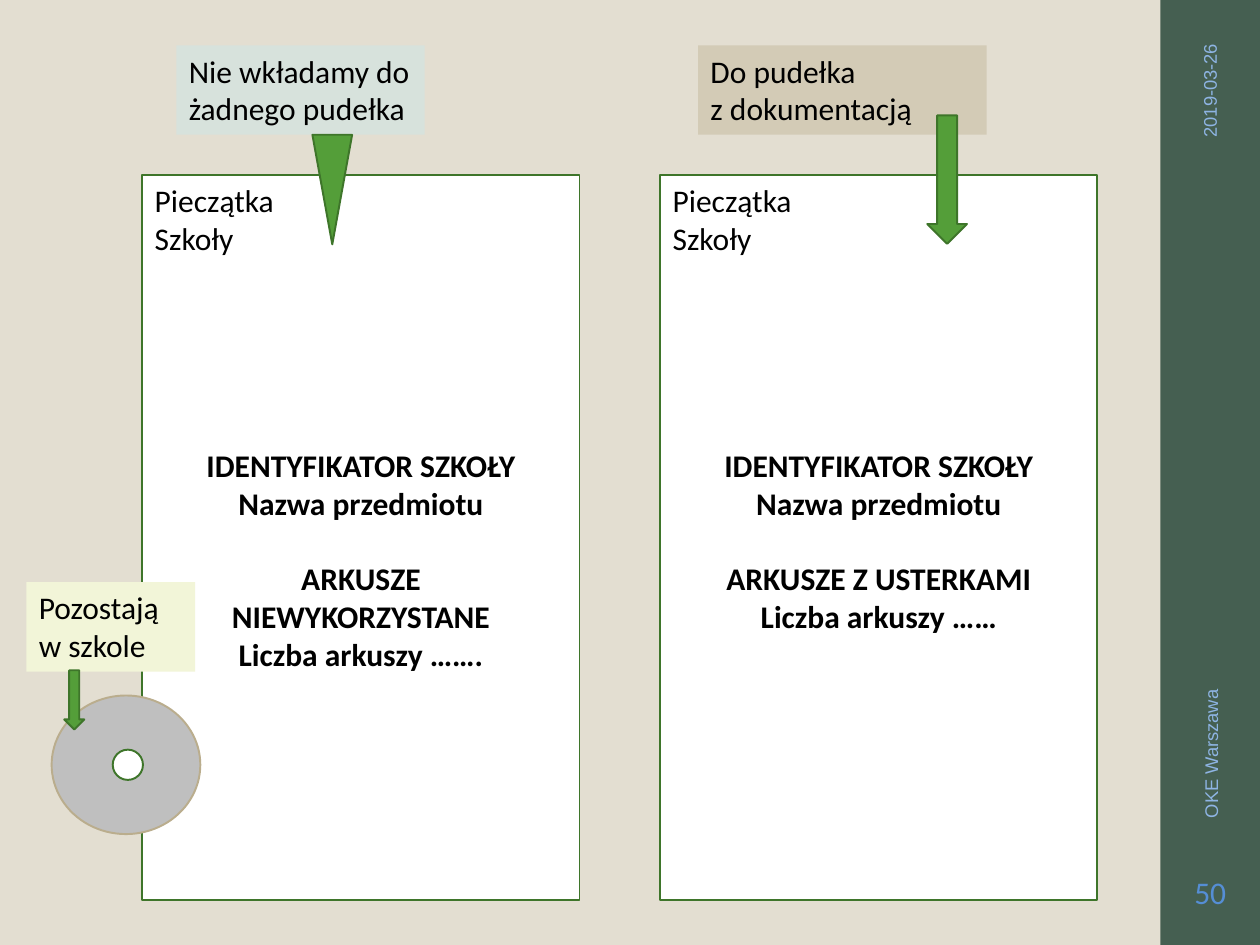
from dataclasses import dataclass

from pptx import Presentation
from pptx.dml.color import RGBColor
from pptx.enum.shapes import MSO_SHAPE
from pptx.enum.text import MSO_ANCHOR, PP_ALIGN
from pptx.util import Inches, Pt

COLS, ROWS = 100, 75          # grid laid over the slide
SLIDE_W, SLIDE_H = Inches(10), Inches(7.5)
GREEN, DARK_GREEN, WHITE = "549E39", "3E752A", "FFFFFF"
LINE_PITCH = 21.6             # points per text line at 18 pt


@dataclass
class Box:
    """Left, top, width and height in grid columns and rows."""
    col: float
    row: float
    cols: float
    rows: float

    def emu(self) -> tuple[int, ...]:
        cw, rh = SLIDE_W / COLS, SLIDE_H / ROWS
        return tuple(round(v) for v in (self.col * cw, self.row * rh,
                                        self.cols * cw, self.rows * rh))


@dataclass
class Line:
    text: str
    bold: bool = False
    lines_before: int = 0
    align: PP_ALIGN = PP_ALIGN.LEFT
    size: float = 18
    font: str = "Calibri"
    color: str = "000000"


def rgb(value: str) -> RGBColor:
    return RGBColor.from_string(value)


def add_shape(s, kind, box: Box, fill: str, line: str | None = None):
    sp = s.shapes.add_shape(kind, *box.emu())
    sp.shadow.inherit = False
    sp.fill.solid()
    sp.fill.fore_color.rgb = rgb(fill)
    if line:
        sp.line.color.rgb = rgb(line)
        sp.line.width = Pt(1.1)
    else:
        sp.line.fill.background()
    return sp


def write(sp, lines: list[Line], anchor=MSO_ANCHOR.TOP) -> None:
    tf = sp.text_frame
    tf.word_wrap = True
    tf.vertical_anchor = anchor
    for i, line in enumerate(lines):
        p = tf.paragraphs[0] if i == 0 else tf.add_paragraph()
        p.text = line.text
        p.alignment = line.align
        if line.lines_before:
            p.space_before = Pt(line.lines_before * LINE_PITCH)
        p.font.size = Pt(line.size)
        p.font.name = line.font
        p.font.bold = line.bold
        p.font.color.rgb = rgb(line.color)


def add_label(s, box: Box, fill: str, *texts: str) -> None:
    write(add_shape(s, MSO_SHAPE.RECTANGLE, box, fill), [Line(t) for t in texts])


def add_envelope(s, col: float, *contents: str) -> None:
    sp = add_shape(s, MSO_SHAPE.RECTANGLE, Box(col, 13.9, 34.7, 57.5),
                   WHITE, DARK_GREEN)
    centred = ["IDENTYFIKATOR SZKOŁY", "Nazwa przedmiotu", *contents]
    gaps = {0: 5, 2: 1}       # empty lines above the centred lines
    write(sp, [Line("Pieczątka"), Line("Szkoły")]
          + [Line(t, True, gaps.get(i, 0), PP_ALIGN.CENTER)
             for i, t in enumerate(centred)])


def add_arrow(s, box: Box, adjustments: tuple[float, ...] = ()) -> None:
    sp = add_shape(s, MSO_SHAPE.DOWN_ARROW, box, GREEN, DARK_GREEN)
    for i, value in enumerate(adjustments):
        sp.adjustments[i] = value


def add_side_text(s, box: Box, line: Line, rotation: int = 0):
    sp = s.shapes.add_textbox(*box.emu())
    sp.rotation = rotation
    write(sp, [line], MSO_ANCHOR.MIDDLE)
    return sp


def main() -> None:
    prs = Presentation()
    prs.slide_width, prs.slide_height = SLIDE_W, SLIDE_H
    s = prs.slides.add_slide(prs.slide_layouts[6])
    s.background.fill.solid()
    s.background.fill.fore_color.rgb = rgb("E3DED1")

    # Side band with date, footer and slide number
    add_shape(s, MSO_SHAPE.RECTANGLE, Box(92.1, 0, 7.9, ROWS), "455F51")
    small = {"size": 10.5, "font": "Arial", "color": "8EB4E3"}
    add_side_text(s, Box(85.6, 11.4, 20.8, 3),
                  Line("2019-03-26", align=PP_ALIGN.RIGHT, **small), 270)
    add_side_text(s, Box(76.5, 44.8, 39.2, 3), Line("OKE Warszawa", **small), 270)
    number = add_side_text(s, Box(92.3, 67.5, 7.5, 6.5),
                           Line("50", align=PP_ALIGN.CENTER, color="558ED5"))
    number.text_frame.margin_left = number.text_frame.margin_right = Inches(0.03)

    # Envelopes
    add_envelope(s, 11.3, "ARKUSZE", "NIEWYKORZYSTANE", "Liczba arkuszy …….")
    add_envelope(s, 52.4, "ARKUSZE Z USTERKAMI", "Liczba arkuszy ……")

    # Labels and arrows above the envelopes
    add_label(s, Box(55.4, 3.6, 22.9, 7.1), "D3CBB6",
              "Do pudełka", "z dokumentacją")
    add_arrow(s, Box(73.6, 9.15, 3.15, 10.2))
    add_label(s, Box(14, 3.6, 19.7, 7.1), "D7E2DC",
              "Nie wkładamy do żadnego pudełka")
    add_arrow(s, Box(24.8, 10.7, 3.15, 8.7), (1, 2.76))

    # Disc that stays at school
    add_shape(s, MSO_SHAPE.OVAL, Box(4.1, 55.2, 11.8, 11), "BFBFBF", "BAAD8D")
    add_shape(s, MSO_SHAPE.OVAL, Box(8.95, 59.5, 2.4, 2.4), WHITE, DARK_GREEN)
    add_label(s, Box(2.1, 46.2, 13.4, 7.1), "F2F5D8", "Pozostają w szkole")
    add_arrow(s, Box(5.1, 53.2, 1.6, 4.7))

    prs.save("out.pptx")


if __name__ == "__main__":
    main()
